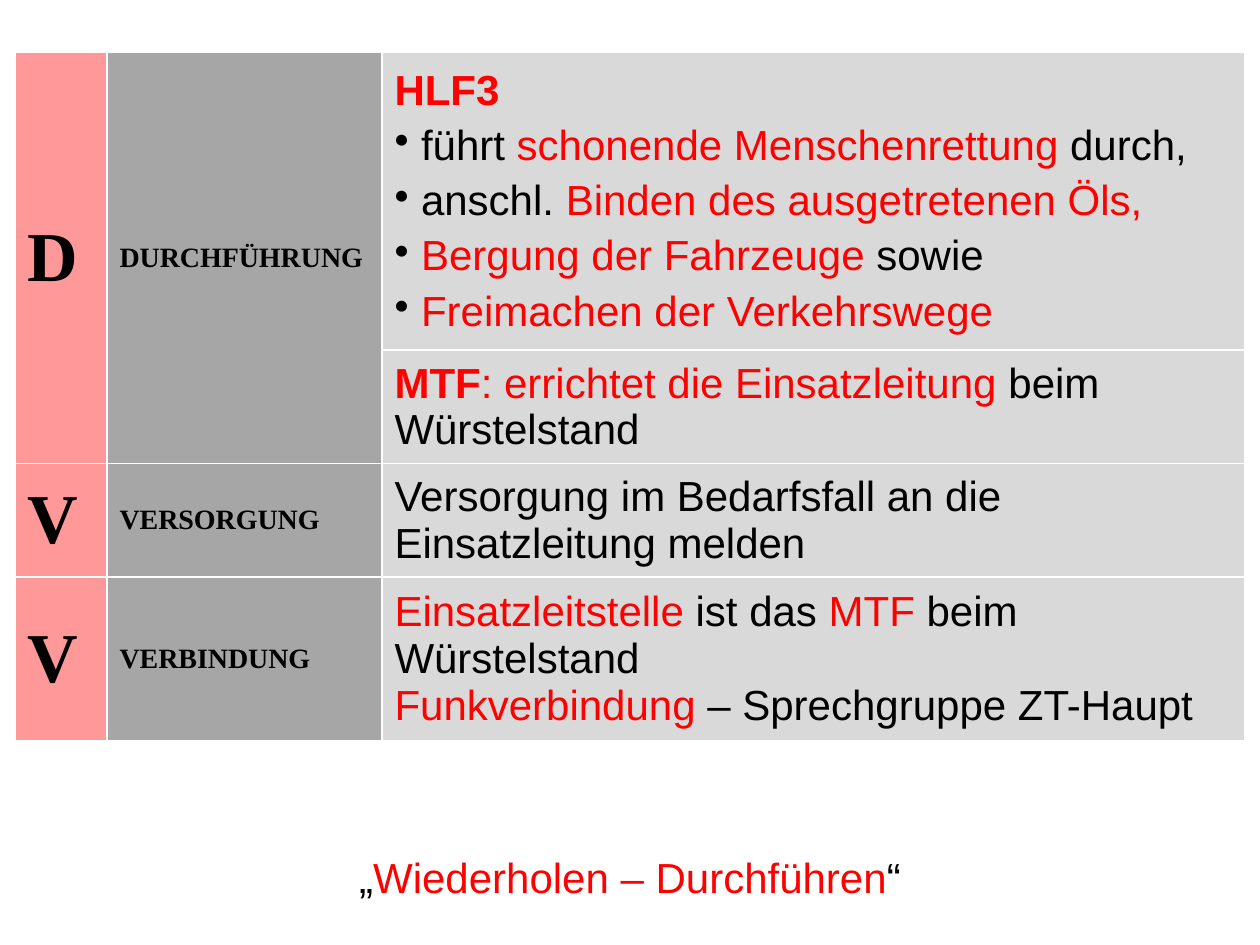
from dataclasses import dataclass

from lxml import etree
from pptx import Presentation
from pptx.dml.color import RGBColor
from pptx.enum.text import MSO_ANCHOR, MSO_AUTO_SIZE, PP_ALIGN
from pptx.oxml.ns import qn
from pptx.util import Pt

MIDDLE = MSO_ANCHOR.MIDDLE
CENTER = PP_ALIGN.CENTER
GROW = MSO_AUTO_SIZE.SHAPE_TO_FIT_TEXT
EMU_PER_PX = 914400 / 126
BLACK, RED, WHITE = "000000", "FF0000", "FFFFFF"
PINK, DARK_GREY, LIGHT_GREY = "FF9999", "A6A6A6", "D9D9D9"
LETTER = {"name": "Times New Roman", "size": Pt(40), "bold": True}
HEADING = {"name": "Times New Roman", "size": Pt(16), "bold": True}
BODY = {"name": "Arial", "size": Pt(24), "bold": False}


@dataclass
class Span:
    """A piece of text in one colour and weight."""
    text: str
    color: str = BLACK
    bold: bool = False


@dataclass
class Para:
    """A paragraph made of spans."""
    spans: list[Span]
    spaced: bool = False
    bullet: bool = False


@dataclass
class Section:
    """A letter and heading with one or more content cells."""
    letter: str
    heading: str
    contents: list[list[Para]]


def item(*spans: Span) -> Para:
    """Return a spaced bullet paragraph."""
    return Para(list(spans), spaced=True, bullet=True)


SECTIONS = [
    Section("D", "DURCHFÜHRUNG", [
        [
            Para([Span("HLF3", RED, True)], spaced=True),
            item(Span(" führt"), Span(" schonende Menschenrettung", RED), Span(" durch,")),
            item(Span(" anschl. "), Span("Binden des ausgetretenen Öls,", RED)),
            item(Span(" "), Span("Bergung der Fahrzeuge", RED), Span(" sowie")),
            item(Span(" "), Span("Freimachen der Verkehrswege", RED)),
        ],
        [Para([Span("MTF", RED, True), Span(": errichtet die Einsatzleitung ", RED),
               Span("beim Würstelstand")])],
    ]),
    Section("V", "VERSORGUNG", [
        [Para([Span("Versorgung im Bedarfsfall an die Einsatzleitung melden")])],
    ]),
    Section("V", "VERBINDUNG", [
        [
            Para([Span("Einsatzleitstelle", RED), Span(" ist das "), Span("MTF ", RED),
                  Span("beim Würstelstand")], spaced=True),
            Para([Span("Funkverbindung ", RED), Span("– Sprechgruppe ZT-Haupt")]),
        ],
    ]),
]
MOTTO = [Para([Span("„"), Span("Wiederholen – Durchführen", RED), Span("“")])]
COLUMN_WIDTHS = [92, 275, 863]
ROW_HEIGHTS = [297, 113, 113, 164]


def px(length: int) -> int:
    """Turn pixels into EMU."""
    return round(length * EMU_PER_PX)


def rgb(color: str) -> RGBColor:
    """Turn a hex string into a colour."""
    return RGBColor.from_string(color)


def write(frame, paras: list[Para], style: dict) -> None:
    """Write paragraphs into a text frame."""
    for index, para in enumerate(paras):
        line = frame.add_paragraph() if index else frame.paragraphs[0]
        if para.spaced:
            line.space_before = Pt(4.8)
        if para.bullet:
            etree.SubElement(line._p.get_or_add_pPr(), qn("a:buChar"), char="•")
        for span in para.spans:
            run = line.add_run()
            run.text = span.text
            for name, value in style.items():
                setattr(run.font, name, value)
            run.font.bold = span.bold or style["bold"]
            run.font.color.rgb = rgb(span.color)


def format_cell(cell, fill: str) -> None:
    """Give a cell its borders, fill and anchor."""
    properties = cell._tc.get_or_add_tcPr()
    for side in ("lnL", "lnR", "lnT", "lnB"):
        border = etree.SubElement(properties, qn(f"a:{side}"), w=str(Pt(1)))
        solid = etree.SubElement(border, qn("a:solidFill"))
        etree.SubElement(solid, qn("a:srgbClr"), val=WHITE)
    cell.fill.solid()
    cell.fill.fore_color.rgb = rgb(fill)
    cell.vertical_anchor = MIDDLE


def draw_table(page) -> None:
    """Draw the table of sections."""
    table = page.shapes.add_table(
        len(ROW_HEIGHTS), len(COLUMN_WIDTHS), px(15), px(52),
        px(sum(COLUMN_WIDTHS)), px(sum(ROW_HEIGHTS))).table
    table.first_row = table.horz_banding = False
    for column, width in zip(table.columns, COLUMN_WIDTHS):
        column.width = px(width)
    for row, height in zip(table.rows, ROW_HEIGHTS):
        row.height = px(height)
        for cell, fill in zip(row.cells, (PINK, DARK_GREY, LIGHT_GREY)):
            format_cell(cell, fill)
    top = 0
    for section in SECTIONS:
        bottom = top + len(section.contents) - 1
        labels = ((section.letter, LETTER), (section.heading, HEADING))
        for column, (text, style) in enumerate(labels):
            cell = table.cell(top, column)
            if bottom > top:
                cell.merge(table.cell(bottom, column))
            write(cell.text_frame, [Para([Span(text)])], style)
        for row, paras in enumerate(section.contents, top):
            write(table.cell(row, 2).text_frame, paras, BODY)
        top = bottom + 1


def draw_motto(page) -> None:
    """Draw the centred closing line."""
    box = page.shapes.add_textbox(px(15), px(845), px(1230), px(64))
    frame = box.text_frame
    frame.word_wrap = True
    frame.auto_size = GROW
    write(frame, MOTTO, BODY)
    frame.paragraphs[0].alignment = CENTER


def main() -> None:
    """Build and save the deck."""
    deck = Presentation()
    deck.slide_width, deck.slide_height = px(1260), px(945)
    page = deck.slides.add_slide(deck.slide_layouts[6])
    draw_motto(page)
    draw_table(page)
    deck.save("out.pptx")


if __name__ == "__main__":
    main()
